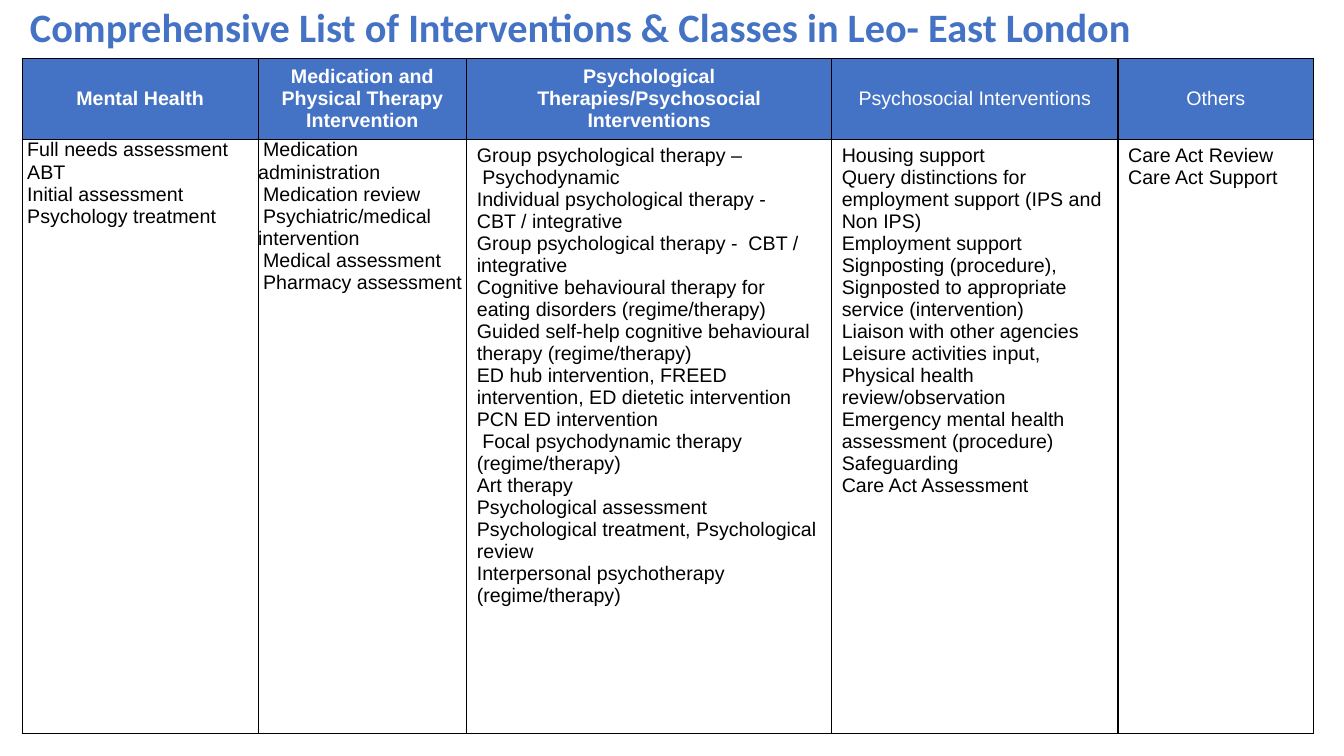
from dataclasses import dataclass

from lxml.etree import SubElement
from pptx import Presentation
from pptx.dml.color import RGBColor as RGB
from pptx.enum.text import MSO_ANCHOR as ANCHOR, PP_ALIGN as ALIGN
from pptx.oxml.ns import qn
from pptx.util import Inches, Pt

# In the texts below, "~" stands for a no-break space.
NBSP = chr(160)

COLUMNS = [
    dict(head="Mental Health", width=2.34, bold=True, flush=True, items=[
        "Full needs assessment",
        "ABT",
        "Initial assessment",
        "Psychology treatment",
    ]),
    dict(head="Medication and Physical Therapy Intervention",
         width=2.07, bold=True, flush=True, items=[
             "Medication administration",
             "Medication review",
             "Psychiatric/medical intervention",
             "Medical assessment",
             "Pharmacy assessment",
         ]),
    dict(head="Psychological Therapies/Psychosocial Interventions",
         width=3.62, bold=True, flush=False, items=[
             "Group~psychological therapy –~Psychodynamic",
             "Individual~psychological~therapy - CBT /~integrative",
             "Group psychological~therapy -~~CBT / integrative",
             "Cognitive~behavioural~therapy~for eating~disorders~(regime/therapy)",
             "Guided self-help cognitive behavioural therapy (regime/therapy)",
             "ED hub intervention, FREED intervention, ED dietetic intervention",
             "PCN ED intervention",
             "~Focal psychodynamic therapy (regime/therapy)",
             "Art therapy",
             "Psychological assessment",
             "Psychological treatment, Psychological review",
             "Interpersonal psychotherapy (regime/therapy)",
         ]),
    dict(head="Psychosocial Interventions", width=2.84, bold=False, flush=False, items=[
        "Housing support",
        "Query distinctions for employment support (IPS and Non IPS)",
        "Employment support",
        "Signposting (procedure), Signposted to appropriate service (intervention)",
        "Liaison with other agencies",
        "Leisure activities input, Physical health review/observation",
        "Emergency mental health assessment (procedure)",
        "Safeguarding",
        "Care Act Assessment",
    ]),
    dict(head="Others", width=1.94, bold=False, flush=False, items=[
        "Care Act Review",
        "Care Act Support",
    ]),
]


@dataclass(frozen=True)
class Theme:
    accent: RGB = RGB(0x44, 0x72, 0xC4)
    paper: RGB = RGB(0xFF, 0xFF, 0xFF)
    ink: RGB = RGB(0, 0, 0)
    title_font: str = "Calibri"
    body_font: str = "Arial"
    title_size: float = 28.8
    body_size: float = 14
    border: float = 1
    first_line: float = 0.05


class SlideBuilder:
    def __init__(self, slide, theme):
        self.slide, self.theme = slide, theme

    def add_lines(self, tf, lines, color, align, **font):
        for i, line in enumerate(lines):
            p = tf.paragraphs[0] if i == 0 else tf.add_paragraph()
            p.alignment = align
            r = p.add_run()
            r.text = line.replace("~", NBSP)
            r.font.color.rgb = color
            for name, value in font.items():
                setattr(r.font, name, value)

    def title(self, text, left, top, width, height):
        t = self.theme
        box = self.slide.shapes.add_textbox(*map(Inches, (left, top, width, height)))
        tf = box.text_frame
        tf.word_wrap = True
        tf.vertical_anchor = ANCHOR.MIDDLE
        self.add_lines(tf, [text], t.accent, ALIGN.CENTER,
                       name=t.title_font, size=Pt(t.title_size), bold=True)
        tf.paragraphs[0].line_spacing = 0.9

    def borders(self, cell):
        tc_pr = cell._tc.get_or_add_tcPr()
        for i, side in enumerate(("lnL", "lnR", "lnT", "lnB")):
            ln = tc_pr.makeelement(qn(f"a:{side}"), {"w": str(Pt(self.theme.border))})
            fill = SubElement(ln, qn("a:solidFill"))
            SubElement(fill, qn("a:srgbClr"), val=str(self.theme.ink))
            tc_pr.insert(i, ln)

    def cell(self, cell, lines, fill, color, align, anchor, bold):
        t = self.theme
        cell.fill.solid()
        cell.fill.fore_color.rgb = fill
        cell.vertical_anchor = anchor
        self.borders(cell)
        self.add_lines(cell.text_frame, lines, color, align,
                       name=t.body_font, size=Pt(t.body_size), bold=bold)

    def remove_margins(self, cell):
        """Set the text flush with the cell edges, with a slight first-line indent."""
        for side in ("left", "right", "top", "bottom"):
            setattr(cell, f"margin_{side}", 0)
        for p in cell.text_frame.paragraphs:
            p_pr = p._p.get_or_add_pPr()
            p_pr.set("marL", "0")
            p_pr.set("indent", str(Inches(self.theme.first_line)))

    def table(self, columns, left, top, row_heights):
        t = self.theme
        size = sum(c["width"] for c in columns), sum(row_heights)
        frame = self.slide.shapes.add_table(
            len(row_heights), len(columns), *map(Inches, (left, top, *size)))
        table = frame.table
        table.first_row = table.horz_banding = False
        for row, height in zip(table.rows, row_heights):
            row.height = Inches(height)
        for i, column in enumerate(columns):
            table.columns[i].width = Inches(column["width"])
            self.cell(table.cell(0, i), [column["head"]], t.accent, t.paper,
                      ALIGN.CENTER, ANCHOR.MIDDLE, column["bold"])
            body = table.cell(1, i)
            self.cell(body, column["items"], t.paper, t.ink,
                      ALIGN.LEFT, ANCHOR.TOP, False)
            if column["flush"]:
                self.remove_margins(body)


def main():
    prs = Presentation()
    prs.slide_width, prs.slide_height = Inches(13.33), Inches(7.5)
    s = SlideBuilder(prs.slides.add_slide(prs.slide_layouts[6]), Theme())
    s.title("Comprehensive List of Interventions & Classes in Leo- East London",
            0, 0, 11.52, 0.58)
    s.table(COLUMNS, 0.22, 0.58, (0.76, 5.9))
    prs.save("out.pptx")


if __name__ == "__main__":
    main()
